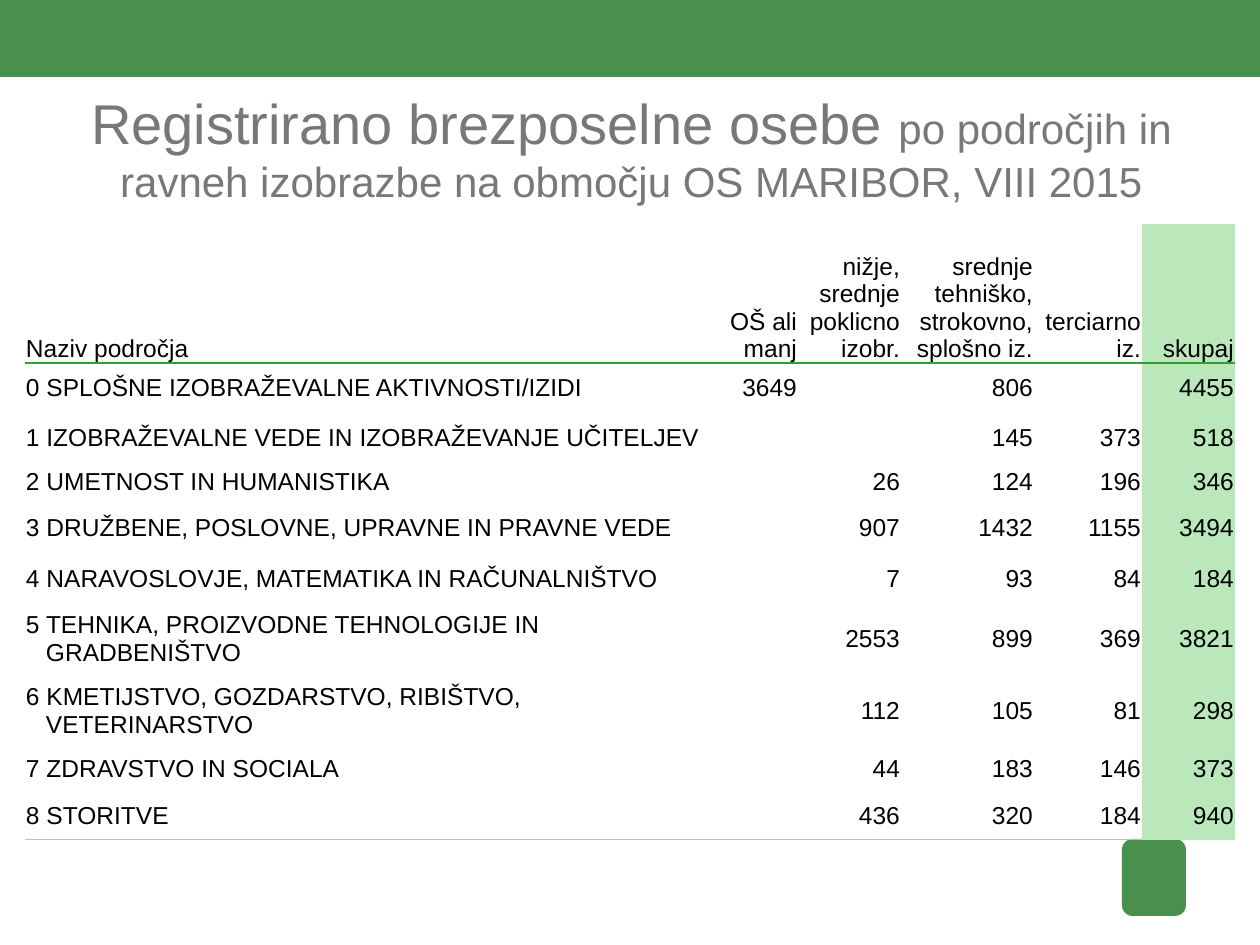
"""Build the slide on registered unemployed people by field and level of education."""
from lxml import etree
from pptx import Presentation
from pptx.dml.color import RGBColor
from pptx.enum.shapes import MSO_SHAPE
from pptx.enum.text import MSO_ANCHOR, PP_ALIGN
from pptx.oxml.ns import qn
from pptx.util import Emu, Pt

RECT, ROUND = MSO_SHAPE.RECTANGLE, MSO_SHAPE.ROUNDED_RECTANGLE
LEFT, MID, RIGHT = PP_ALIGN.LEFT, PP_ALIGN.CENTER, PP_ALIGN.RIGHT
LOW, HALF = MSO_ANCHOR.BOTTOM, MSO_ANCHOR.MIDDLE
SCALE = 914400 // 126
HUES = {"brand": "49904D", "title": "797777", "ink": "000000",
        "total": "BAE8BB", "head": "339E35", "foot": "BFBFBF"}
PLAIN = "{2D5ABB26-0587-4C30-8999-92F81FD0307C}"
WIDTHS = [694, 79, 103, 133, 108, 93]
HEIGHTS = [139, 50, 49, 38, 53, 49, 72, 72, 44, 49]
ROWS = [
    ["Naziv področja", "OŠ ali manj", "nižje, srednje poklicno izobr.",
     "srednje tehniško, strokovno, splošno iz.", "terciarno iz.", "skupaj"],
    ["0 SPLOŠNE IZOBRAŽEVALNE AKTIVNOSTI/IZIDI", "3649", "", "806", "", "4455"],
    ["1 IZOBRAŽEVALNE VEDE IN IZOBRAŽEVANJE UČITELJEV", "", "", "145", "373", "518"],
    ["2 UMETNOST IN HUMANISTIKA", "", "26", "124", "196", "346"],
    ["3 DRUŽBENE, POSLOVNE, UPRAVNE IN PRAVNE VEDE", "", "907", "1432", "1155", "3494"],
    ["4 NARAVOSLOVJE, MATEMATIKA IN RAČUNALNIŠTVO", "", "7", "93", "84", "184"],
    ["5 TEHNIKA, PROIZVODNE TEHNOLOGIJE IN\nGRADBENIŠTVO", "", "2553", "899", "369", "3821"],
    ["6 KMETIJSTVO, GOZDARSTVO, RIBIŠTVO,\nVETERINARSTVO", "", "112", "105", "81", "298"],
    ["7 ZDRAVSTVO IN SOCIALA", "", "44", "183", "146", "373"],
    ["8 STORITVE", "", "436", "320", "184", "940"],
]


def px(num):
    return Emu(num * SCALE)


def tint(name):
    return RGBColor.from_string(HUES[name])


class Deck:
    """Hold the font and the current slide, and add each kind of element."""

    def __init__(self, wide, high, font):
        self.prs = Presentation()
        self.prs.slide_width, self.prs.slide_height = px(wide), px(high)
        self.slide = self.prs.slides.add_slide(self.prs.slide_layouts[6])
        self.font = font

    def style(self, item, form):
        for key, val in form.items():
            setattr(item, key, val)

    def label(self, para, text, size, hue):
        run = para.add_run()
        run.text = text
        self.style(run.font, {"name": self.font, "size": Pt(size)})
        run.font.color.rgb = tint(hue)

    def shape(self, kind, box, hue):
        item = self.slide.shapes.add_shape(kind, *map(px, box))
        item.shadow.inherit = False
        item.fill.solid()
        item.fill.fore_color.rgb = tint(hue)
        item.line.fill.background()

    def title(self, box, parts, hue):
        frame = self.slide.shapes.add_textbox(*map(px, box)).text_frame
        self.style(frame, {"word_wrap": True, "vertical_anchor": HALF})
        para = frame.paragraphs[0]
        para.alignment = MID
        for text, size in parts:
            self.label(para, text, size, hue)

    def rule(self, cell, hue, width):
        line = etree.Element(qn("a:lnB"), w=str(Pt(width)))
        fill = etree.SubElement(line, qn("a:solidFill"))
        etree.SubElement(fill, qn("a:srgbClr"), val=HUES[hue])
        cell._tc.get_or_add_tcPr().insert(0, line)

    def cell(self, cell, text, align, anchor, hue):
        self.style(cell, {"margin_left": px(1), "margin_right": px(1), "margin_top": px(1),
                          "margin_bottom": 0, "vertical_anchor": anchor})
        if hue:
            cell.fill.solid()
            cell.fill.fore_color.rgb = tint(hue)
        else:
            cell.fill.background()
        frame = cell.text_frame
        for num, part in enumerate(text.split("\n") if text else []):
            para = frame.add_paragraph() if num else frame.paragraphs[0]
            para.alignment = align
            if num:
                para._p.get_or_add_pPr().set("marL", str(px(20)))
            self.label(para, part, 14, "ink")

    def table(self, left, top, rows, widths, heights):
        box = map(px, (left, top, sum(widths), sum(heights)))
        grid = self.slide.shapes.add_table(len(rows), len(widths), *box).table
        self.style(grid, {"first_row": False, "horz_banding": False})
        grid._tbl.tblPr.find(qn("a:tableStyleId")).text = PLAIN
        for col, wide in zip(grid.columns, widths):
            col.width = px(wide)
        for row, high in zip(grid.rows, heights):
            row.height = px(high)
        end, last = len(rows) - 1, len(widths) - 1
        for r, row in enumerate(rows):
            for c, text in enumerate(row):
                cell = grid.cell(r, c)
                self.cell(cell, text, RIGHT if c else LEFT, HALF if r else LOW,
                          "total" if c == last else None)
                if r == 0:
                    self.rule(cell, "head", 1)
                elif r == end and c < last:
                    self.rule(cell, "foot", 0.5)


def main():
    deck = Deck(1260, 945, "Arial")
    deck.shape(RECT, (0, -1, 1260, 78), "brand")
    deck.shape(ROUND, (1122, 839, 64, 77), "brand")
    deck.title((64, 82, 1135, 131), [
        ("Registrirano brezposelne osebe ", 32),
        ("po področjih in ravneh izobrazbe na območju OS MARIBOR, VIII 2015", 24)], "title")
    deck.table(25, 224, ROWS, WIDTHS, HEIGHTS)
    deck.prs.save("out.pptx")


if __name__ == "__main__":
    main()
